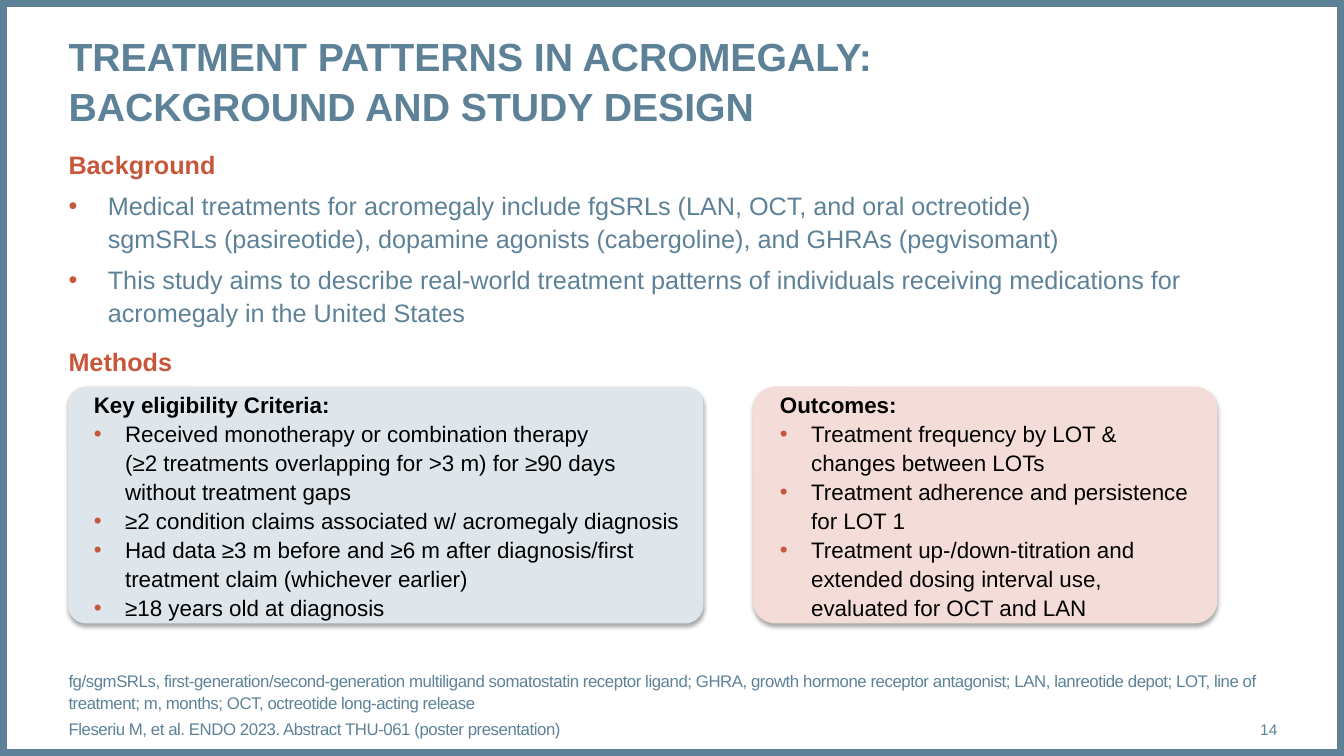
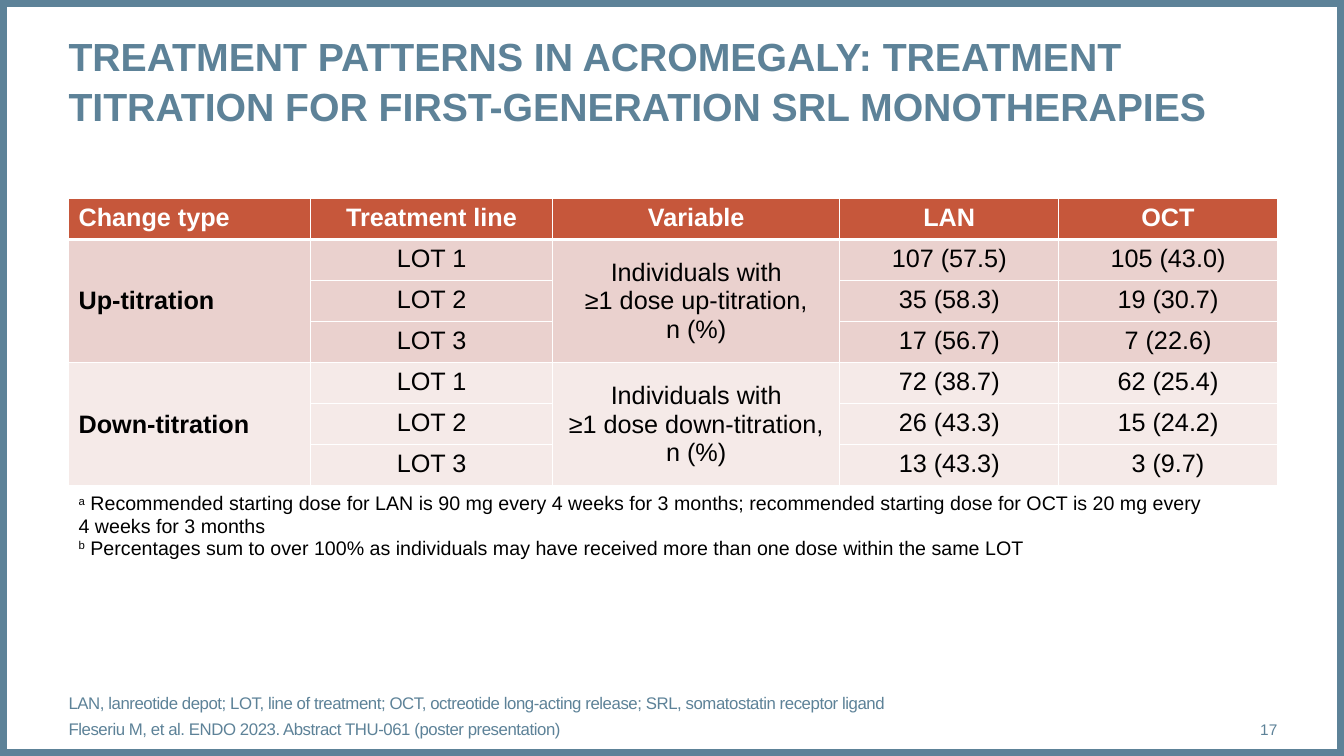
from lxml.etree import SubElement
from pptx import Presentation
from pptx.dml.color import RGBColor
from pptx.enum.shapes import MSO_SHAPE
from pptx.enum.text import MSO_ANCHOR, PP_ALIGN
from pptx.oxml import parse_xml
from pptx.oxml.ns import nsdecls, qn
from pptx.util import Inches, Pt

BLUE = RGBColor(0x5D, 0x82, 0x98)
RUST = RGBColor(0xC6, 0x57, 0x3B)
BLACK = RGBColor(0, 0, 0)
WHITE = RGBColor(0xFF, 0xFF, 0xFF)
PALE_BLUE = RGBColor(0xDE, 0xE6, 0xEB)
PALE_RUST = RGBColor(0xF4, 0xDD, 0xD8)
UP_FILL = RGBColor(0xEA, 0xD1, 0xCE)
DOWN_FILL = RGBColor(0xF5, 0xEA, 0xE8)
FONT = "Arial"
LEFT, WIDTH = Inches(0.68), Inches(11.99)
LEADING = 1.08


def write(tf, text, size=18, color=BLUE, bold=False, align=PP_ALIGN.LEFT,
          before=0, indent=0, spacing=0, leading=LEADING, mark=""):
    """Add one paragraph; indent gives it a bullet, mark a leading superscript."""
    p = tf.paragraphs[0]
    if p.runs:
        p = tf.add_paragraph()
    p.alignment, p.space_before, p.line_spacing = align, Pt(before), leading
    if indent:
        pPr = p._p.get_or_add_pPr()
        pPr.set("marL", str(Inches(indent)))
        pPr.set("indent", str(-Inches(indent)))
        clr = SubElement(pPr, qn("a:buClr"))
        SubElement(clr, qn("a:srgbClr"), val=str(RUST))
        SubElement(pPr, qn("a:buFont"), typeface=FONT)
        SubElement(pPr, qn("a:buChar"), char="•")
    pieces = [(mark, True)] if mark else []
    for i, line in enumerate(text.split("\n")):
        pieces += [("\n", False)] * (i > 0) + [(line, False)]
    for piece, raised in pieces:
        if piece == "\n":
            p.add_line_break()
            continue
        r = p.add_run()
        r.text = piece
        r.font.name, r.font.size, r.font.bold = FONT, Pt(size), bold
        r.font.color.rgb = color
        if spacing:
            r._r.get_or_add_rPr().set("spc", str(int(spacing * 100)))
        if raised:
            r._r.get_or_add_rPr().set("baseline", "30000")


def text_box(s, left, top, width, height, anchor=MSO_ANCHOR.TOP):
    tf = s.shapes.add_textbox(left, top, width, height).text_frame
    tf.word_wrap, tf.vertical_anchor = True, anchor
    tf.margin_left = tf.margin_top = tf.margin_right = tf.margin_bottom = 0
    return tf


prs = Presentation()
prs.slide_width, prs.slide_height = Inches(13.33), Inches(7.5)

# Shared frame, title, page number and footer
pages = [
    ("TREATMENT PATTERNS IN ACROMEGALY:\nBACKGROUND AND STUDY DESIGN", "14", 12.13,
     "fg/sgmSRLs, first-generation/second-generation multiligand somatostatin "
     "receptor ligand; GHRA, growth hormone receptor antagonist; LAN, lanreotide "
     "depot; LOT, line of treatment; m, months; OCT, octreotide long-acting release"),
    ("TREATMENT PATTERNS IN ACROMEGALY: TREATMENT TITRATION FOR FIRST-GENERATION "
     "SRL MONOTHERAPIES", "17", 11.13,
     "LAN, lanreotide depot; LOT, line of treatment; OCT, octreotide long-acting "
     "release; SRL, somatostatin receptor ligand"),
]
for title, number, footer_width, abbreviations in pages:
    s = prs.slides.add_slide(prs.slide_layouts[6])
    frame = s.shapes.add_shape(MSO_SHAPE.RECTANGLE, 0, 0, prs.slide_width, prs.slide_height)
    frame.shadow.inherit = False
    frame.fill.background()
    frame.line.color.rgb, frame.line.width = BLUE, Pt(10)
    write(text_box(s, LEFT, Inches(0.28), WIDTH, Inches(0.94)), title, size=28, bold=True)
    tf = text_box(s, Inches(11.81), Inches(7.03), Inches(0.86), Inches(0.4), MSO_ANCHOR.MIDDLE)
    write(tf, number, size=11, align=PP_ALIGN.RIGHT)
    tf = text_box(s, LEFT, Inches(6.96), Inches(footer_width), Inches(0.37), MSO_ANCHOR.BOTTOM)
    for line in (abbreviations,
                 "Fleseriu M, et al. ENDO 2023. Abstract THU-061 (poster presentation)"):
        write(tf, line, size=12, before=3, spacing=-0.3)

design, titration = prs.slides

# Study design: body text
tf = text_box(design, LEFT, Inches(1.46), WIDTH, Inches(4.95))
write(tf, "Background", color=RUST, bold=True, before=12)
for line in (
    "Medical treatments for acromegaly include fgSRLs (LAN, OCT, and oral octreotide)\n"
    "sgmSRLs (pasireotide), dopamine agonists (cabergoline), and GHRAs (pegvisomant)",
    "This study aims to describe real-world treatment patterns of individuals "
    "receiving medications for acromegaly in the United States",
):
    write(tf, line, before=6, indent=0.39)
write(tf, "Methods", color=RUST, bold=True, before=12)

# Study design: method cards
cards = [
    (0.68, 6.29, 0.075, PALE_BLUE, "Key eligibility Criteria:", [
        "Received monotherapy or combination therapy\n"
        "(≥2 treatments overlapping for >3 m) for ≥90 days without treatment gaps",
        "≥2 condition claims associated w/ acromegaly diagnosis",
        "Had data ≥3 m before and ≥6 m after diagnosis/first treatment claim "
        "(whichever earlier)",
        "≥18 years old at diagnosis"]),
    (7.47, 4.6, 0.096, PALE_RUST, "Outcomes:", [
        "Treatment frequency by LOT & changes between LOTs",
        "Treatment adherence and persistence for LOT 1",
        "Treatment up-/down-titration and extended dosing interval use, "
        "evaluated for OCT and LAN"]),
]
for left, width, radius, fill, heading, items in cards:
    sp = design.shapes.add_shape(MSO_SHAPE.ROUNDED_RECTANGLE, Inches(left), Inches(3.84),
                                 Inches(width), Inches(2.34))
    sp.adjustments[0] = radius
    sp.fill.solid()
    sp.fill.fore_color.rgb = sp.line.color.rgb = fill
    sp.line.width = Pt(0.75)
    sp._element.spPr.append(parse_xml(
        f'<a:effectLst {nsdecls("a")}><a:outerShdw blurRad="{Pt(3.1)}" dist="{Pt(1.8)}" '
        'dir="5400000" rotWithShape="0"><a:srgbClr val="000000"><a:alpha val="35000"/>'
        '</a:srgbClr></a:outerShdw></a:effectLst>'))
    tf = sp.text_frame
    tf.word_wrap, tf.vertical_anchor = True, MSO_ANCHOR.MIDDLE
    tf.margin_left, tf.margin_right = Inches(0.2), Inches(0.1)
    tf.margin_top = tf.margin_bottom = Inches(0.05)
    write(tf, heading, size=16, color=BLACK, bold=True)
    for item in items:
        write(tf, item, size=16, color=BLACK, indent=0.31)

# Titration: table
rows = [
    ["Change type", "Treatment line", "Variable", "LAN", "OCT"],
    ["Up-titration", "LOT 1", "Individuals with\n≥1 dose up-titration,\nn (%)",
     "107 (57.5)", "105 (43.0)"],
    ["", "LOT 2", "", "35 (58.3)", "19 (30.7)"],
    ["", "LOT 3", "", "17 (56.7)", "7 (22.6)"],
    ["Down-titration", "LOT 1", "Individuals with\n≥1 dose down-titration,\nn (%)",
     "72 (38.7)", "62 (25.4)"],
    ["", "LOT 2", "", "26 (43.3)", "15 (24.2)"],
    ["", "LOT 3", "", "13 (43.3)", "3 (9.7)"],
]
fills = [RUST] + [UP_FILL] * 3 + [DOWN_FILL] * 3
table = titration.shapes.add_table(8, 5, LEFT, Inches(1.97), WIDTH, Inches(3.64)).table
table.first_row = table.horz_banding = False
for column, width in zip(table.columns, (2.4, 2.4, 2.85, 2.17, 2.17)):
    column.width = Inches(width)
for row in table.rows:
    row.height = int(Inches(2.85) / 7)
table.rows[7].height = Inches(0.79)
for top in (1, 4):
    for col in (0, 2):
        table.cell(top, col).merge(table.cell(top + 2, col))
notes = table.cell(7, 0)
notes.merge(table.cell(7, 4))
notes.fill.background()
notes.vertical_anchor = MSO_ANCHOR.MIDDLE

for i, (texts, fill) in enumerate(zip(rows, fills)):
    for j, text in enumerate(texts):
        cell = table.cell(i, j)
        cell.fill.solid()
        cell.fill.fore_color.rgb = fill
        if cell.is_spanned:
            continue
        if cell.is_merge_origin:
            cell.vertical_anchor = MSO_ANCHOR.MIDDLE
        write(cell.text_frame, text, color=BLACK if i else WHITE, bold=i == 0 or j == 0,
              align=PP_ALIGN.CENTER if j else PP_ALIGN.LEFT, leading=1.0)
        for k, side in enumerate(("lnL", "lnR", "lnT", "lnB")):
            thick = (i, side) in ((0, "lnB"), (1, "lnT"))
            cell._tc.get_or_add_tcPr().insert(k, parse_xml(
                f'<a:{side} {nsdecls("a")} w="{Pt(3 if thick else 1)}"><a:solidFill>'
                f'<a:srgbClr val="{WHITE}"/></a:solidFill></a:{side}>'))

# Titration: table notes
for mark, text in (
    ("a", " Recommended starting dose for LAN is 90 mg every 4 weeks for 3 months; "
          "recommended starting dose for OCT is 20 mg every\n4 weeks for 3 months"),
    ("b", " Percentages sum to over 100% as individuals may have received more than "
          "one dose within the same LOT"),
):
    write(notes.text_frame, text, size=14, color=BLACK, leading=1.0, mark=mark)

prs.save("out.pptx")
